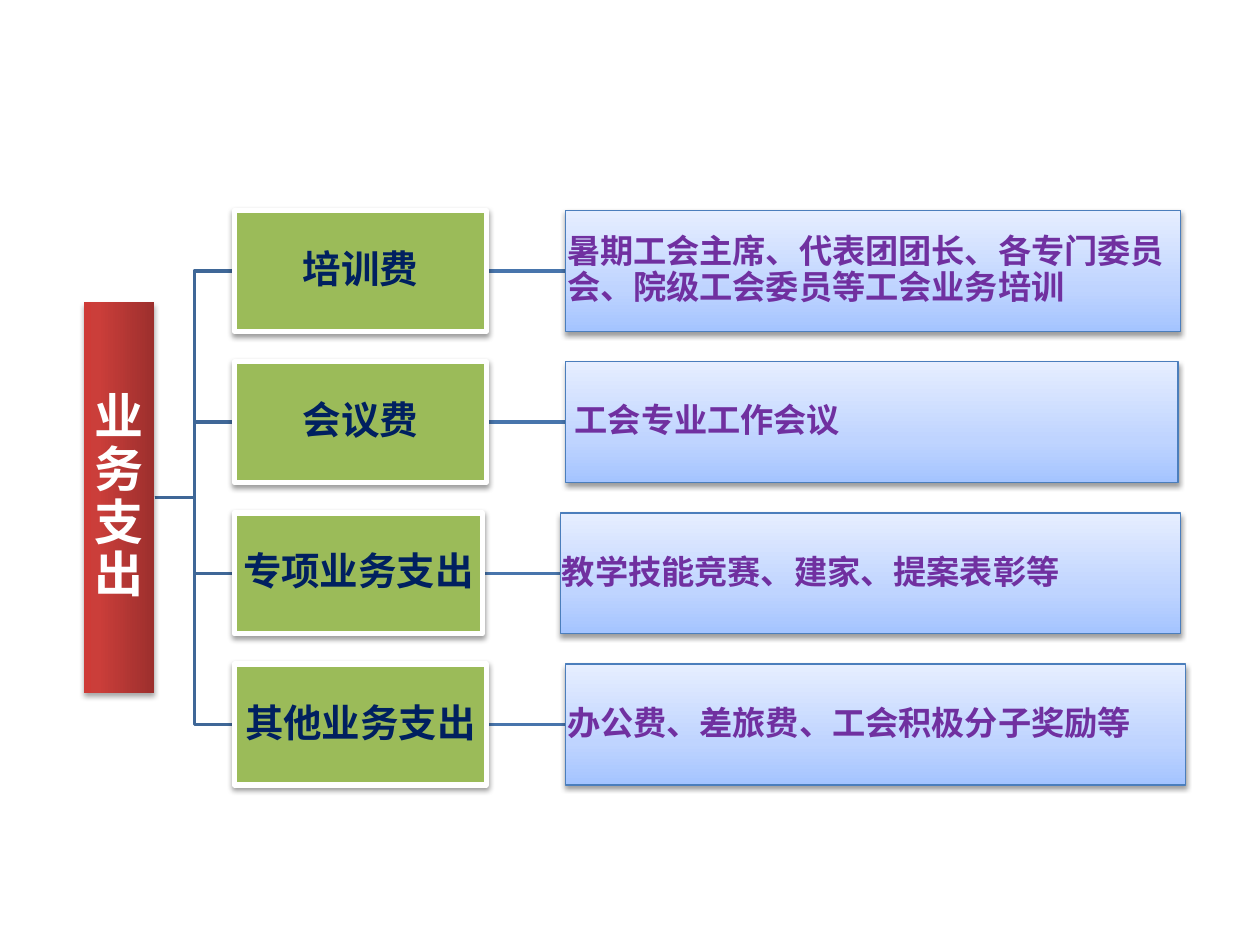
from copy import deepcopy

from lxml.etree import SubElement
from pptx import Presentation
from pptx.dml.color import RGBColor
from pptx.enum.shapes import MSO_CONNECTOR, MSO_SHAPE
from pptx.enum.text import MSO_ANCHOR, PP_ALIGN
from pptx.oxml.ns import qn
from pptx.util import Pt

EAST_ASIAN_FONT = "Noto Sans CJK SC"
ROW_TOP, ROW_PITCH, ROW_HEIGHT = 120.3, 86.4, 69.1
CATEGORY_LEFT = 133.9
RIGHT_SITE, LEFT_SITE = 3, 1
RED_STOPS = [(0, "9C2F2D"), (0.8, "CB3E3A"), (1, "CE3B37")]
BLUE_STOPS = [(0, "A4C4FF"), (0.35, "BFD4FF"), (1, "E6EEFF")]

# Category, its width, detail, and the detail's left, width and inset
ROWS = [
    ("培训费", 144, "暑期工会主席、代表团团长、各专门委员会、院级工会委员等工会业务培训", 323.3, 351.4, 0.7),
    ("会议费", 144, "工会专业工作会议", 323.3, 349.9, 5.2),
    ("专项业务支出", 141.8, "教学技能竞赛、建家、提案表彰等", 320.4, 354.2, 0.7),
    ("其他业务支出", 144, "办公费、差旅费、工会积极分子奖励等", 323.3, 354.2, 0.7),
]


def color(value):
    """Return the colour for a hex string."""
    return RGBColor.from_string(value)


def set_gradient(shape, stops, angle):
    """Fill a shape with a linear three-stop gradient."""
    shape.fill.gradient()
    shape.fill.gradient_angle = angle
    stop_list = shape.element.spPr.find(f".//{qn('a:gsLst')}")
    stop_list.append(deepcopy(stop_list[0]))
    for stop, (position, value) in zip(shape.fill.gradient_stops, stops):
        stop.position = position
        stop.color.rgb = color(value)


def set_shadow(shape, distance, opacity):
    """Give a shape a soft black shadow below it."""
    shape.shadow.inherit = False
    effects = shape.element.spPr.find(qn("a:effectLst"))
    shadow = SubElement(effects, qn("a:outerShdw"), blurRad=str(Pt(3.1)),
                        dist=str(Pt(distance)), dir="5400000", rotWithShape="0")
    black = SubElement(shadow, qn("a:srgbClr"), val="000000")
    SubElement(black, qn("a:alpha"), val=str(opacity * 1000))


def set_text(shape, text, *, size, fill, font="Calibri", align=PP_ALIGN.CENTER,
             inset=1.4, left_inset=None):
    """Write bold, vertically centred text into a shape."""
    frame = shape.text_frame
    frame.word_wrap = True
    frame.vertical_anchor = MSO_ANCHOR.MIDDLE
    frame.margin_top = frame.margin_right = frame.margin_bottom = Pt(inset)
    frame.margin_left = Pt(inset if left_inset is None else left_inset)
    paragraph = frame.paragraphs[0]
    paragraph.alignment = align
    paragraph.line_spacing = 0.9
    run = paragraph.add_run()
    run.text = text
    run.font.name = font
    run.font.size = Pt(size)
    run.font.bold = True
    run.font.color.rgb = color(fill)
    SubElement(run.font._element, qn("a:ea"), typeface=EAST_ASIAN_FONT)


def add_box(slide, left, top, width, height, *, fill=None, stops=None, angle=90,
            line=None, line_width=0.75, shadow_distance=1.6, shadow_opacity=38):
    """Add a shadowed rectangle with a solid or gradient fill."""
    box = slide.shapes.add_shape(MSO_SHAPE.RECTANGLE, Pt(left), Pt(top), Pt(width), Pt(height))
    if stops:
        set_gradient(box, stops, angle)
    else:
        box.fill.solid()
        box.fill.fore_color.rgb = color(fill)
    if line:
        box.line.color.rgb = color(line)
        box.line.width = Pt(line_width)
    else:
        box.line.fill.background()
    set_shadow(box, shadow_distance, shadow_opacity)
    return box


def add_link(slide, kind, start, end, line):
    """Join the right side of one box to the left side of another, behind both."""
    link = slide.shapes.add_connector(kind, 0, 0, 0, 0)
    link.begin_connect(start, RIGHT_SITE)
    link.end_connect(end, LEFT_SITE)
    link.line.color.rgb = color(line)
    link.line.width = Pt(2)
    SubElement(link.element.spPr, qn("a:effectLst"))
    start.element.getparent().insert(2, link.element)


def add_row(slide, root, index, row):
    """Add one category with its detail and their links."""
    category_text, category_width, detail_text, detail_left, detail_width, inset = row
    top = ROW_TOP + index * ROW_PITCH
    category = add_box(slide, CATEGORY_LEFT, top, category_width, ROW_HEIGHT,
                       fill="9BBB59", line="FFFFFF", line_width=3)
    set_text(category, category_text, size=22, fill="002060")
    detail = add_box(slide, detail_left, top, detail_width, ROW_HEIGHT,
                     stops=BLUE_STOPS, line="4B7EBC")
    set_text(detail, detail_text, size=19, fill="7030A0", font=EAST_ASIAN_FONT,
             align=PP_ALIGN.LEFT, inset=0.7, left_inset=inset)
    add_link(slide, MSO_CONNECTOR.ELBOW, root, category, "3F6797")
    add_link(slide, MSO_CONNECTOR.STRAIGHT, category, detail, "4875AC")


def main():
    """Build the expenditure tree and save it."""
    presentation = Presentation()
    presentation.slide_width, presentation.slide_height = Pt(720), Pt(540)
    slide = presentation.slides.add_slide(presentation.slide_layouts[6])
    root = add_box(slide, 48, 172.8, 40.3, 223.2, stops=RED_STOPS, angle=180,
                   shadow_distance=1.8, shadow_opacity=35)
    set_text(root, "业务支出", size=28, fill="FFFFFF")
    for index, row in enumerate(ROWS):
        add_row(slide, root, index, row)
    presentation.save("out.pptx")


if __name__ == "__main__":
    main()
